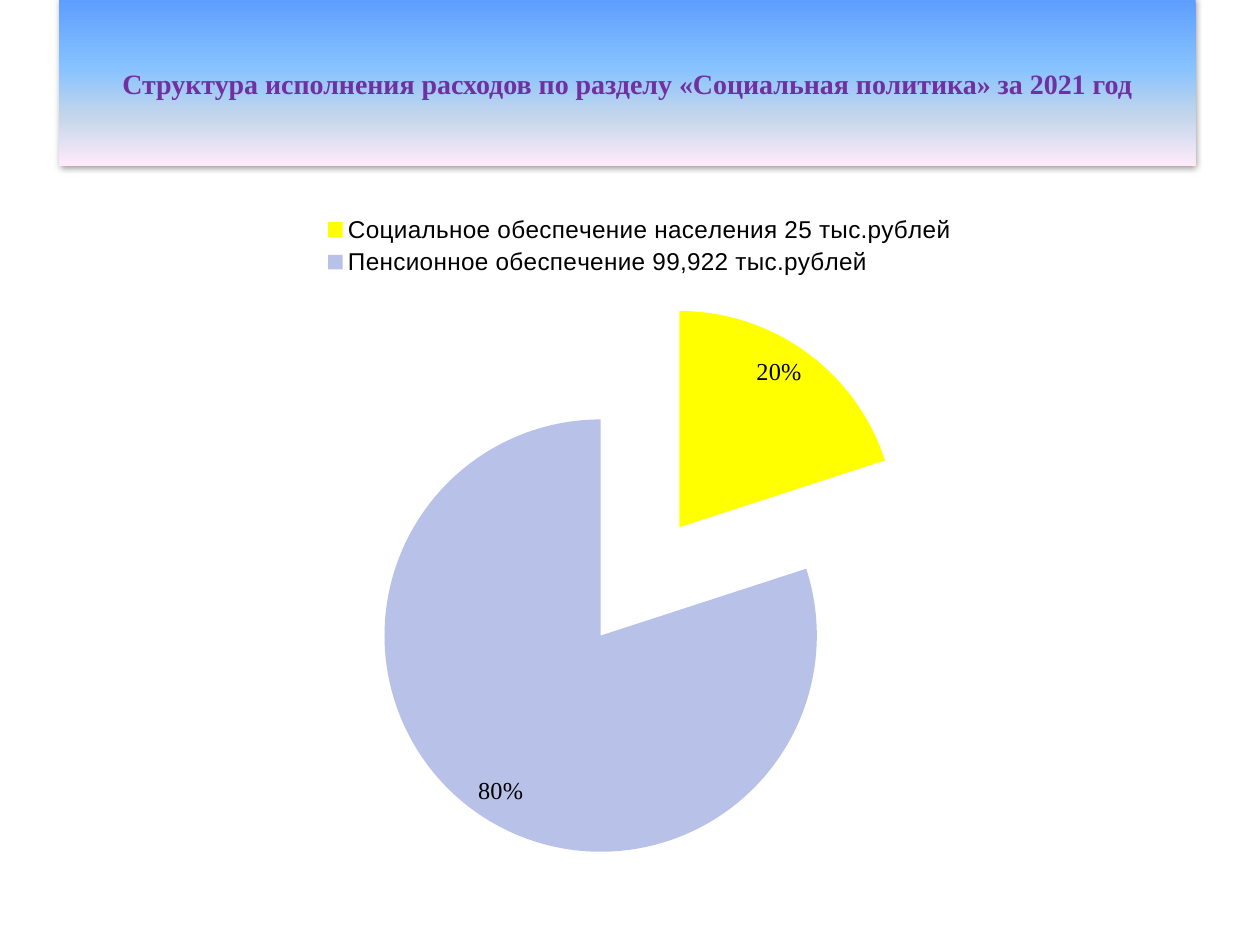
from typing import NamedTuple

from lxml import etree
from pptx import Presentation
from pptx.chart.data import CategoryChartData
from pptx.dml.color import RGBColor
from pptx.enum import chart as ch, shapes, text
from pptx.oxml import parse_xml
from pptx.oxml.ns import nsdecls, qn
from pptx.util import Inches, Pt

BLACK = RGBColor(0x00, 0x00, 0x00)
PURPLE = RGBColor(0x70, 0x30, 0xA0)
YELLOW = RGBColor(0xFF, 0xFF, 0x00)
LAVENDER = RGBColor(0xB8, 0xC2, 0xE9)
SERIF = "Times New Roman"
EXPLOSION = 31


class Slice(NamedTuple):
    label: str
    percent: int
    color: RGBColor


class Stop(NamedTuple):
    percent: int
    color: RGBColor


SLICES = [
    Slice("Социальное обеспечение населения 25 тыс.рублей", 20, YELLOW),
    Slice("Пенсионное обеспечение 99,922 тыс.рублей", 80, LAVENDER),
]
BANNER_STOPS = [
    Stop(0, RGBColor(0x5E, 0x9E, 0xFF)),
    Stop(40, RGBColor(0x85, 0xC2, 0xFF)),
    Stop(70, RGBColor(0xC4, 0xD6, 0xEB)),
    Stop(100, RGBColor(0xFF, 0xEB, 0xFA)),
]


def style_font(font, name: str, size: float, color: RGBColor, bold: bool = False) -> None:
    font.name, font.size, font.bold = name, Pt(size), bold
    font.color.rgb = color


def add_expense_pie(slide) -> None:
    data = CategoryChartData()
    data.categories = [part.label for part in SLICES]
    data.add_series("Series 1", [part.percent for part in SLICES])
    pie = slide.shapes.add_chart(ch.XL_CHART_TYPE.PIE, Inches(1.12), Inches(1.6),
                                 Inches(7.92), Inches(5.4), data).chart
    style_font(pie.font, "Cabin", 15.7, BLACK)
    pie.has_title = False
    pie.has_legend = True
    pie.legend.position = ch.XL_LEGEND_POSITION.TOP
    pie.legend.include_in_layout = False
    style_font(pie.legend.font, "Arial", 13.9, BLACK)

    plot = pie.plots[0]
    plot.vary_by_categories = True
    series = plot.series[0]
    for index, part in enumerate(SLICES):
        fill = series.points[index].format.fill
        fill.solid()
        fill.fore_color.rgb = part.color
    explosion = etree.Element(qn("c:explosion"), val=str(EXPLOSION))
    series._element.find(qn("c:dPt")).addprevious(explosion)

    labels = series.data_labels
    labels.show_percentage = True
    labels.show_value = False
    labels.number_format, labels.number_format_is_linked = "0%", False
    labels.position = ch.XL_LABEL_POSITION.INSIDE_END
    style_font(labels.font, SERIF, 13.9, BLACK)


def add_banner(slide, title: str) -> None:
    banner = slide.shapes.add_shape(shapes.MSO_SHAPE.RECTANGLE, Inches(0.47), 0,
                                    Inches(9.02), Inches(1.32))
    banner.line.fill.background()
    banner.fill.gradient()
    banner.fill.gradient_angle = 270
    stops = banner._element.spPr.find(qn("a:gradFill")).find(qn("a:gsLst"))
    for old_stop in list(stops):
        stops.remove(old_stop)
    for stop in BANNER_STOPS:
        stops.append(parse_xml(f'<a:gs {nsdecls("a")} pos="{stop.percent * 1000}">'
                               f'<a:srgbClr val="{stop.color}"/></a:gs>'))
    banner._element.spPr.append(parse_xml(
        f'<a:effectLst {nsdecls("a")}><a:outerShdw blurRad="{Pt(4)}" dist="0" dir="5400000">'
        '<a:srgbClr val="000000"><a:alpha val="43000"/></a:srgbClr>'
        '</a:outerShdw></a:effectLst>'))

    frame = banner.text_frame
    frame.word_wrap = True
    frame.vertical_anchor = text.MSO_ANCHOR.MIDDLE
    frame.text = title
    paragraph = frame.paragraphs[0]
    paragraph.alignment = text.PP_ALIGN.CENTER
    style_font(paragraph.runs[0].font, SERIF, 16, PURPLE, bold=True)


def main() -> None:
    deck = Presentation()
    deck.slide_width, deck.slide_height = Inches(10), Inches(7.5)
    slide = deck.slides.add_slide(deck.slide_layouts[6])
    add_expense_pie(slide)
    add_banner(slide, "Структура исполнения расходов по разделу «Социальная политика» за 2021 год")
    deck.save("out.pptx")


if __name__ == "__main__":
    main()
